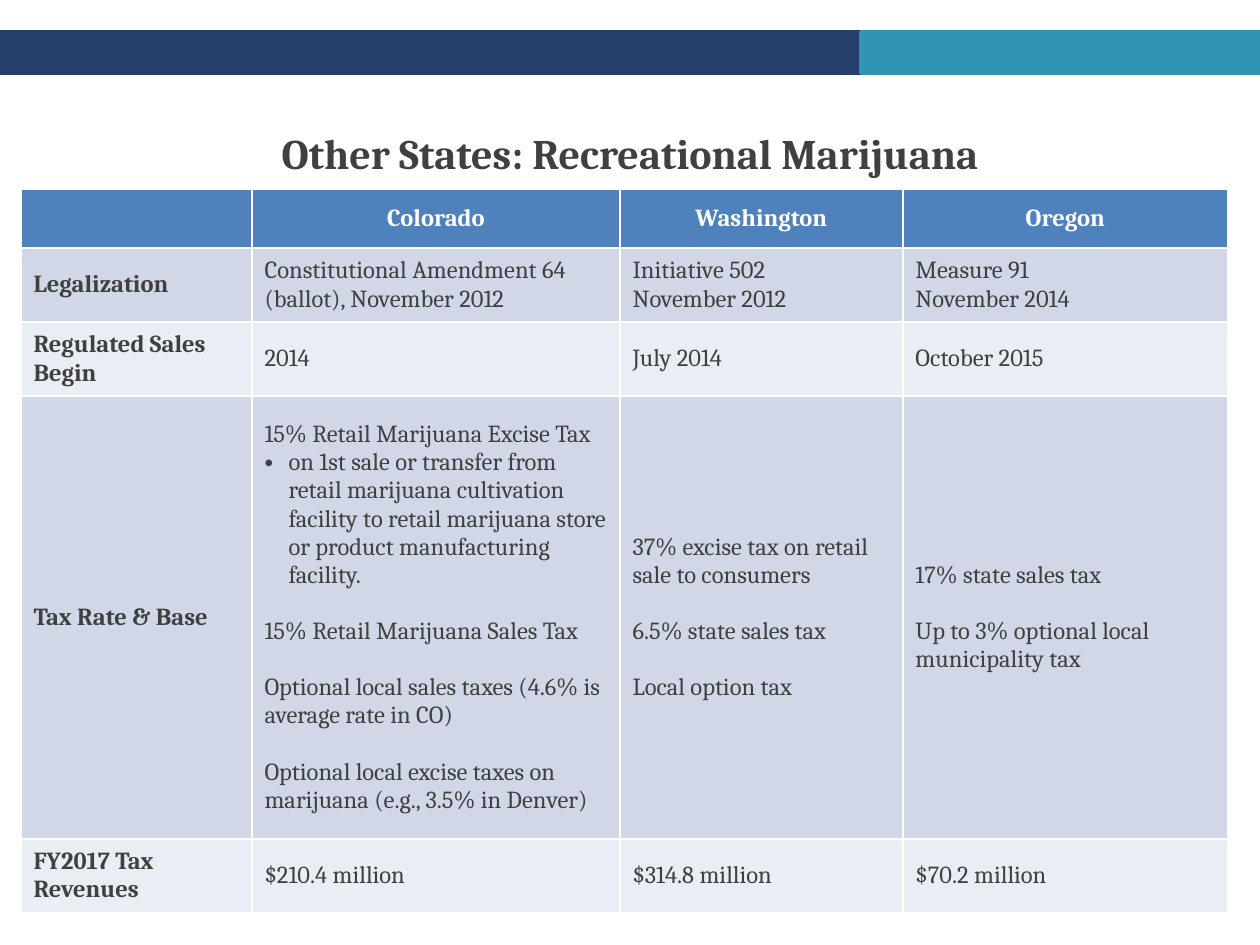
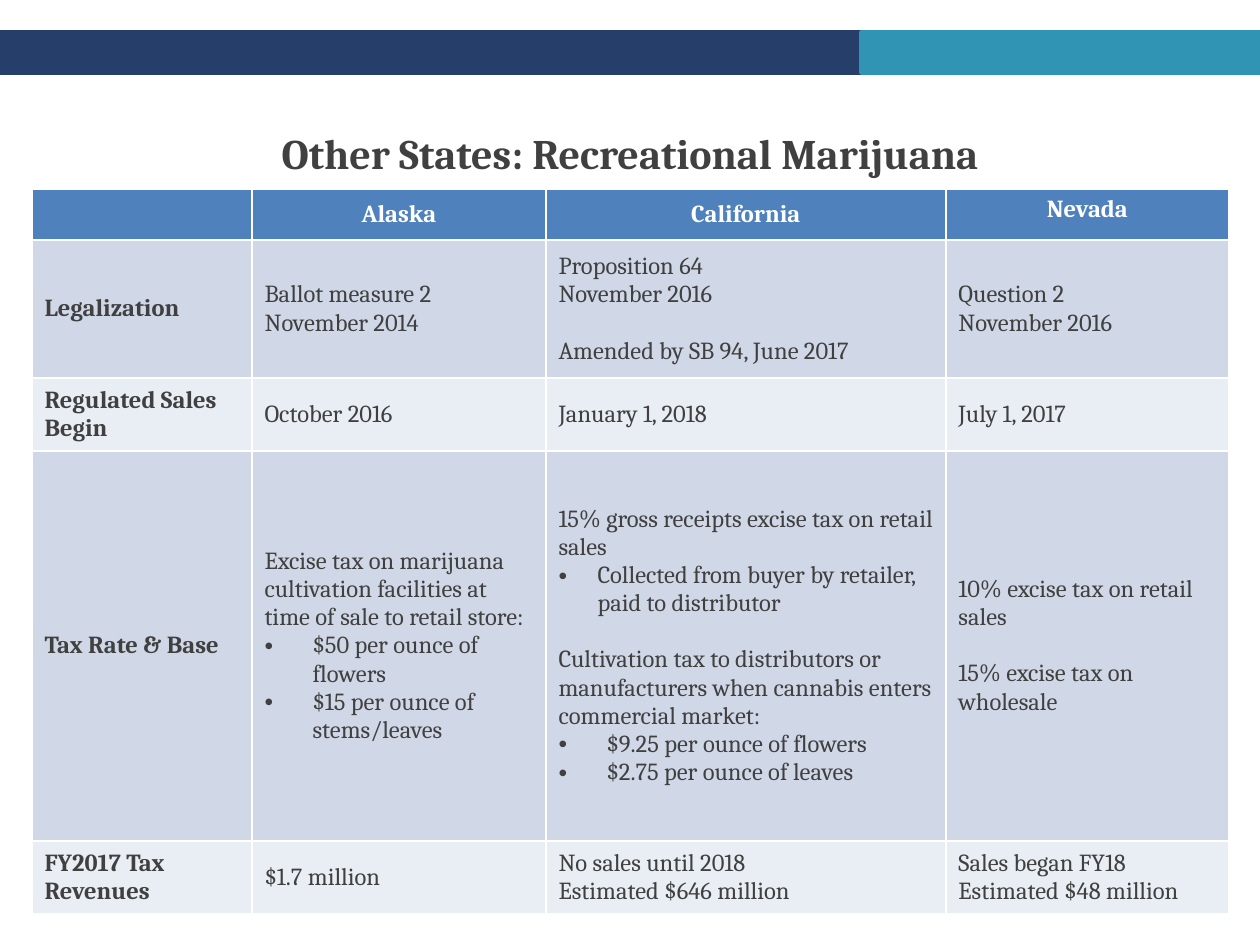
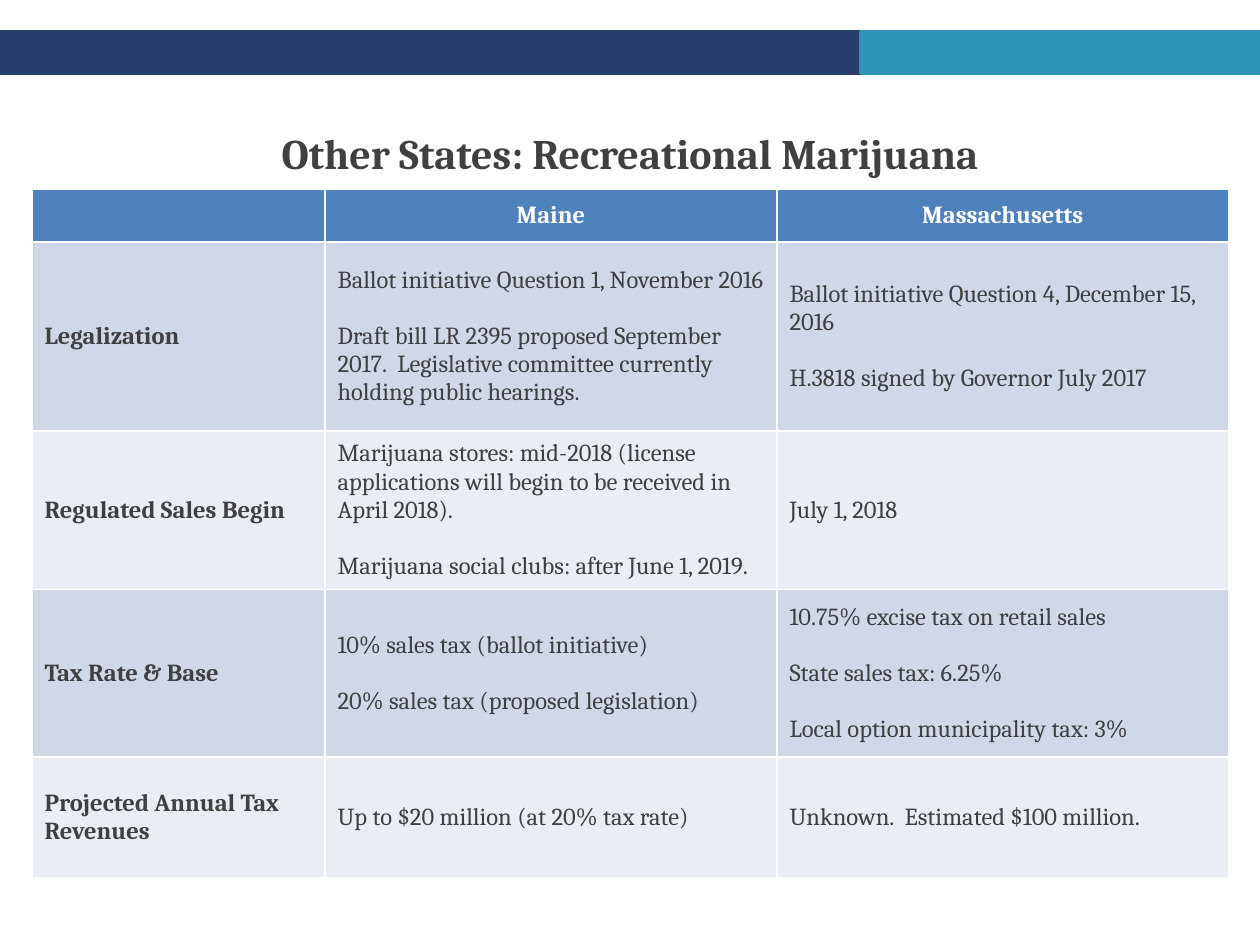
"""Build three slides comparing recreational marijuana taxes across states."""
from dataclasses import dataclass

from lxml import etree
from pptx import Presentation
from pptx.dml.color import RGBColor
from pptx.enum.shapes import MSO_SHAPE
from pptx.enum.text import MSO_ANCHOR, PP_ALIGN
from pptx.oxml.ns import qn
from pptx.util import Pt

RECTANGLE = MSO_SHAPE.RECTANGLE
TOP, MIDDLE = MSO_ANCHOR.TOP, MSO_ANCHOR.MIDDLE
LEFT, CENTER = PP_ALIGN.LEFT, PP_ALIGN.CENTER
EMU_PER_PX = 914400 / 126


@dataclass(frozen=True)
class Theme:
    font: str = "Cambria"
    title_size: int = 24
    table_size: int = 14
    gap: int = 16
    navy: str = "263F6A"
    teal: str = "3095B4"
    header: str = "4F81BD"
    stripes: tuple = ("E9EDF4", "D0D8E8")
    ink: str = "404040"
    white: str = "FFFFFF"


@dataclass(frozen=True)
class Para:
    text: str
    gap: bool = False
    indent: int = 0


THEME = Theme()


def px(length):
    return round(length * EMU_PER_PX)


def style(paragraph, size, color, bold, align):
    paragraph.alignment = align
    font = paragraph.font
    font.name, font.size, font.bold = THEME.font, Pt(size), bold
    font.color.rgb = RGBColor.from_string(color)


BANDS = [(0, 861, THEME.navy), (861, 399, THEME.teal)]
TITLE = "Other States: Recreational Marijuana"

TABLES = [
    {
        "left": 21,
        "columns": [231, 368, 283, 325],
        "heights": [59, 74, 74, 443, 74],
        "rows": [
            ["", "Colorado", "Washington", "Oregon"],
            ["Legalization",
             "Constitutional Amendment 64 (ballot), November 2012",
             ["Initiative 502", "November 2012"],
             ["Measure 91", "November 2014"]],
            ["Regulated Sales Begin", "2014", "July 2014", "October 2015"],
            ["Tax Rate & Base",
             ["15% Retail Marijuana Excise Tax",
              Para("on 1st sale or transfer from retail marijuana cultivation facility "
                   "to retail marijuana store or product manufacturing facility.", indent=24),
              Para("15% Retail Marijuana Sales Tax", gap=True),
              Para("Optional local sales taxes (4.6% is average rate in CO)", gap=True),
              Para("Optional local excise taxes on marijuana (e.g., 3.5% in Denver)", gap=True)],
             ["37% excise tax on retail sale to consumers",
              Para("6.5% state sales tax", gap=True),
              Para("Local option tax", gap=True)],
             ["17% state sales tax",
              Para("Up to 3% optional local municipality tax", gap=True)]],
            ["FY2017 Tax Revenues", "$210.4 million", "$314.8 million", "$70.2 million"],
        ],
    },
    {
        "left": 32,
        "columns": [220, 294, 400, 283],
        "heights": [51, 138, 73, 390, 73],
        "top_headers": ["Nevada"],
        "rows": [
            ["", "Alaska", "California", "Nevada"],
            ["Legalization",
             "Ballot measure 2 November 2014",
             ["Proposition 64", "November 2016",
              Para("Amended by SB 94, June 2017", gap=True)],
             ["Question 2", "November 2016"]],
            ["Regulated Sales Begin", "October 2016", "January 1, 2018", "July 1, 2017"],
            ["Tax Rate & Base",
             ["Excise tax on marijuana cultivation facilities at time of sale to retail store:",
              Para("$50 per ounce of flowers", indent=48),
              Para("$15 per ounce of stems/leaves", indent=48)],
             ["15% gross receipts excise tax on retail sales",
              Para("Collected from buyer by retailer, paid to distributor", indent=39),
              Para("Cultivation tax to distributors or manufacturers when cannabis "
                   "enters commercial market:", gap=True),
              Para("$9.25 per ounce of flowers", indent=48),
              Para("$2.75 per ounce of leaves", indent=48)],
             ["10% excise tax on retail sales",
              Para("15% excise tax on wholesale", gap=True)]],
            ["FY2017 Tax Revenues",
             "$1.7 million",
             ["No sales until 2018", "Estimated $646 million"],
             ["Sales began FY18", "Estimated $48 million"]],
        ],
    },
    {
        "left": 32,
        "columns": [293, 452, 452],
        "heights": [53, 189, 153, 168, 121],
        "rows": [
            ["", "Maine", "Massachusetts"],
            ["Legalization",
             ["Ballot initiative Question 1, November 2016",
              Para("Draft bill LR 2395 proposed September 2017.  Legislative committee "
                   "currently holding public hearings.", gap=True)],
             ["Ballot initiative Question 4, December 15, 2016",
              Para("H.3818 signed by Governor July 2017", gap=True)]],
            ["Regulated Sales Begin",
             ["Marijuana stores: mid-2018 (license applications will begin to be "
              "received in April 2018).",
              Para("Marijuana social clubs: after June 1, 2019.", gap=True)],
             "July 1, 2018"],
            ["Tax Rate & Base",
             ["10% sales tax (ballot initiative)",
              Para("20% sales tax (proposed legislation)", gap=True)],
             ["10.75% excise tax on retail sales",
              Para("State sales tax: 6.25%", gap=True),
              Para("Local option municipality tax: 3%", gap=True)]],
            ["Projected Annual Tax Revenues",
             "Up to $20 million (at 20% tax rate)",
             "Unknown.  Estimated $100 million."],
        ],
    },
]

deck = Presentation()
deck.slide_width, deck.slide_height = px(1260), px(945)

for content in TABLES:
    page = deck.slides.add_slide(deck.slide_layouts[6])

    for left, width, color in BANDS:
        band = page.shapes.add_shape(RECTANGLE, px(left), px(32), px(width), px(41))
        band.shadow.inherit = False
        band.fill.solid()
        band.fill.fore_color.rgb = RGBColor.from_string(color)
        band.line.color.rgb = RGBColor.from_string(color)
        band.line.width = Pt(2)

    title = page.shapes.add_textbox(px(63), px(95), px(1134), px(116)).text_frame
    title.word_wrap = True
    title.vertical_anchor = MIDDLE
    title.text = TITLE
    style(title.paragraphs[0], THEME.title_size, THEME.ink, True, CENTER)

    rows, columns, heights = content["rows"], content["columns"], content["heights"]
    table = page.shapes.add_table(
        len(rows), len(columns), px(content["left"]), px(189),
        px(sum(columns)), px(sum(heights))).table
    for column, width in zip(table.columns, columns):
        column.width = px(width)

    for row_index, row in enumerate(rows):
        table.rows[row_index].height = px(heights[row_index])
        is_header = row_index == 0
        fill = THEME.header if is_header else THEME.stripes[row_index % 2]
        ink = THEME.white if is_header else THEME.ink
        for column_index, entry in enumerate(row):
            cell = table.cell(row_index, column_index)
            cell.fill.solid()
            cell.fill.fore_color.rgb = RGBColor.from_string(fill)
            at_top = is_header and entry in content.get("top_headers", [])
            cell.vertical_anchor = TOP if at_top else MIDDLE
            items = entry if isinstance(entry, list) else [entry]
            for item_index, item in enumerate(items):
                para = item if isinstance(item, Para) else Para(item)
                frame = cell.text_frame
                paragraph = frame.add_paragraph() if item_index else frame.paragraphs[0]
                paragraph.text = para.text
                if para.gap:
                    paragraph.space_before = Pt(THEME.gap)
                if para.indent:
                    properties = paragraph._p.get_or_add_pPr()
                    properties.set("marL", str(px(para.indent)))
                    properties.set("indent", str(-px(para.indent)))
                    etree.SubElement(properties, qn("a:buFont"), typeface="Arial")
                    etree.SubElement(properties, qn("a:buChar"), char="•")
                style(paragraph, THEME.table_size, ink, is_header or column_index == 0,
                      CENTER if is_header else LEFT)

deck.save("out.pptx")
